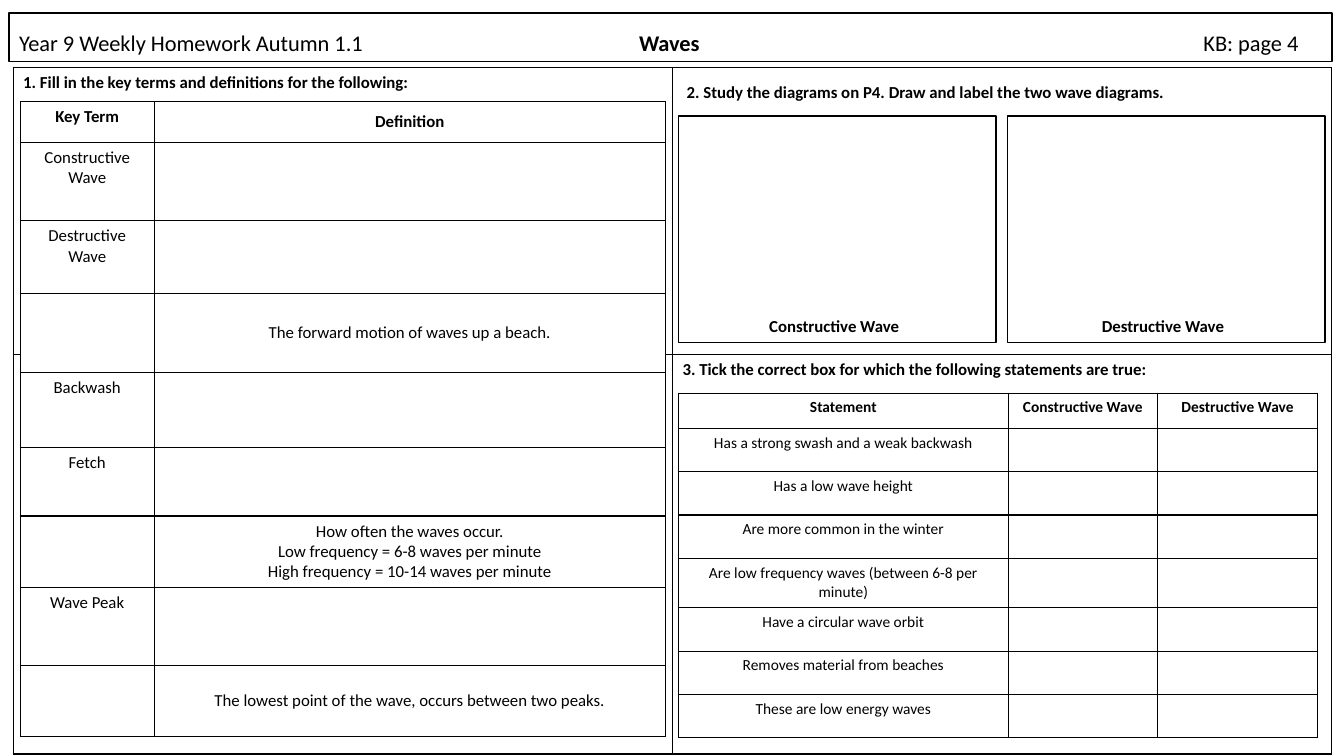
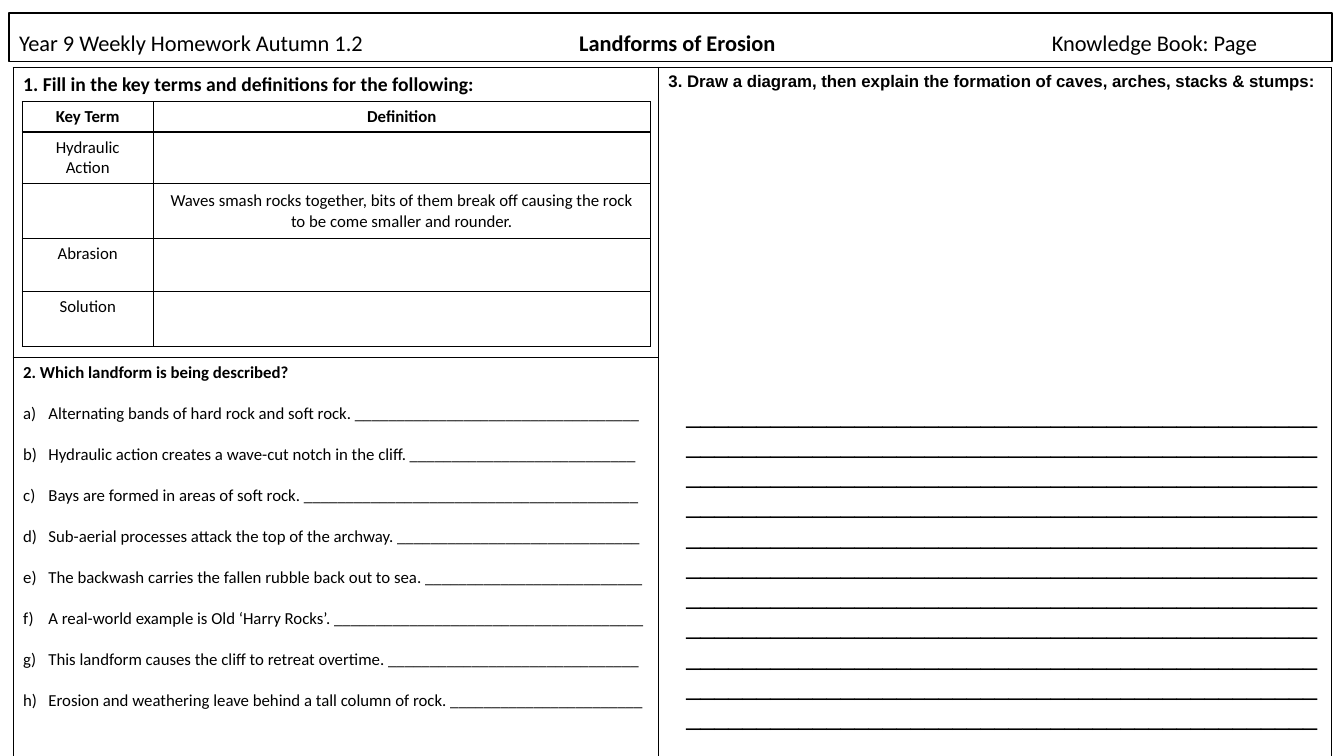
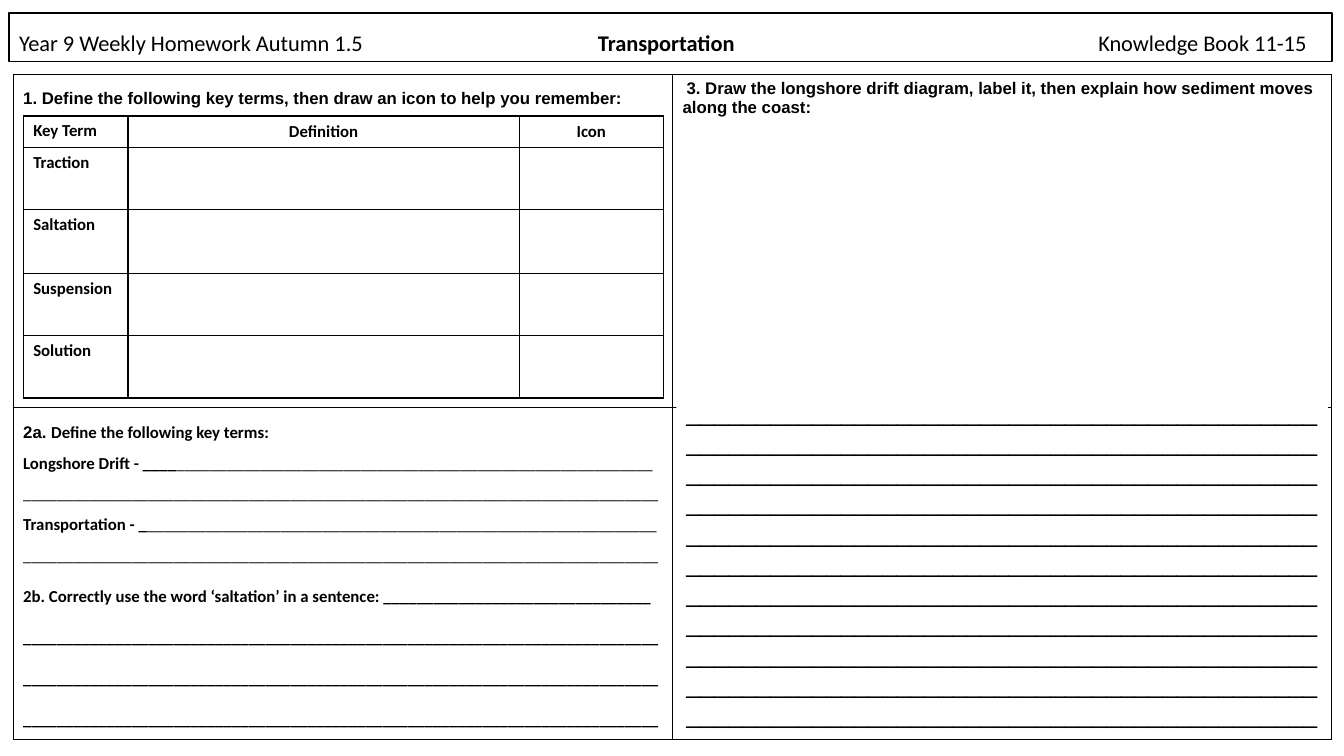
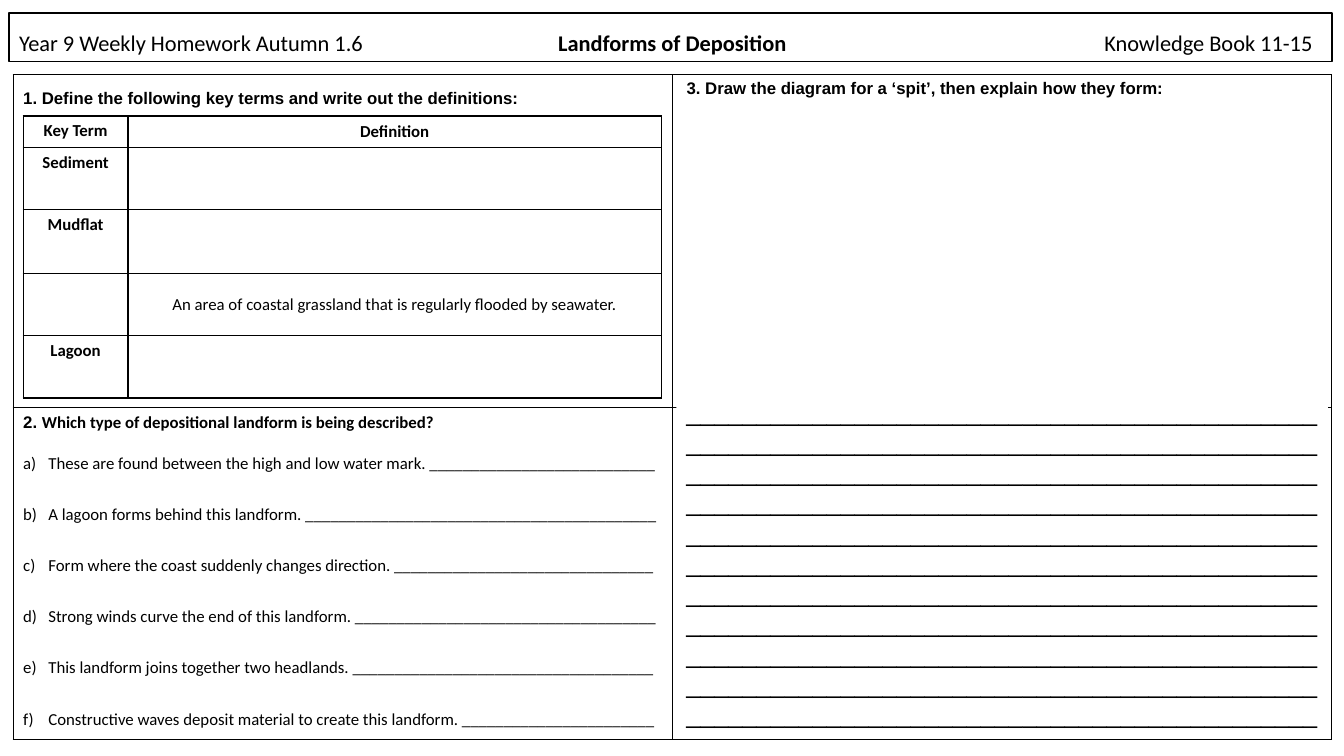
from collections import namedtuple
from dataclasses import dataclass

from lxml import etree
from pptx import Presentation
from pptx.dml.color import RGBColor
from pptx.enum.shapes import MSO_SHAPE as Shape
from pptx.enum.text import MSO_ANCHOR as Anchor, PP_ALIGN as Align
from pptx.oxml.ns import qn
from pptx.util import Inches, Pt

COLOURS = {"ink": "000000", "paper": "FFFFFF"}
BODY, HEADING = "Calibri", "Arial"
LINE_WIDTH = 1
PAGE_WIDTH, PAGE_HEIGHT = 13.33, 7.5

Box = namedtuple("Box", "left top width height")
HEADER = Box(0.09, 0.13, 13.12, 0.48)
FRAME_LEFT, FRAME_WIDTH = 0.13, 13.08
HALVES = (6.54, 6.54)


@dataclass
class Line:
    """One paragraph; text is a string or a list of (text, bold, font) spans."""
    text: object
    size: float = 12
    font: str = BODY
    bold: bool = True
    spacing: float = 1
    before: float = 0
    indent: float = 0
    align: object = Align.LEFT
    lettered: bool = False


def colour(name):
    return RGBColor.from_string(COLOURS[name])


def inches(box):
    return [Inches(length) for length in box]


def set_indent(para, margin, first):
    props = para._p.get_or_add_pPr()
    props.set("marL", str(Inches(margin)))
    props.set("indent", str(Inches(first)))
    return props


def write(frame, lines):
    for number, line in enumerate(lines):
        para = frame.paragraphs[0] if number == 0 else frame.add_paragraph()
        para.alignment = line.align
        para.line_spacing = line.spacing
        para.space_before = Pt(line.before)
        para.font.name, para.font.size = line.font, Pt(line.size)
        para.font.color.rgb = colour("ink")
        if isinstance(line.text, str):
            para.font.bold = line.bold
            para.add_run().text = line.text
        else:
            for text, bold, font in line.text:
                span = para.add_run()
                span.text = text
                span.font.bold, span.font.name = bold, font
        if line.lettered:
            props = set_indent(para, 0.25, -0.25)
            letter = etree.Element(qn("a:buAutoNum"), type="alphaLcParenR")
            props.insert_element_before(letter, "a:tabLst", "a:defRPr", "a:extLst")
        elif line.indent:
            set_indent(para, 0, line.indent)


def add_box(page, box, outlined=True):
    shape = page.shapes.add_shape(Shape.RECTANGLE, *inches(box))
    shape.shadow.inherit = False
    shape.fill.solid()
    shape.fill.fore_color.rgb = colour("paper")
    if outlined:
        shape.line.color.rgb = colour("ink")
        shape.line.width = Pt(LINE_WIDTH)
    else:
        shape.line.fill.background()
    shape.text_frame.word_wrap = True
    return shape


def style_cell(cell):
    cell.fill.solid()
    cell.fill.fore_color.rgb = colour("paper")
    props = cell._tc.get_or_add_tcPr()
    for order, side in enumerate(("lnL", "lnR", "lnT", "lnB")):
        border = etree.Element(qn(f"a:{side}"), w=str(Pt(LINE_WIDTH)))
        fill = etree.SubElement(border, qn("a:solidFill"))
        etree.SubElement(fill, qn("a:srgbClr"), val=COLOURS["ink"])
        props.insert(order, border)


def add_grid(page, left, top, columns, rows):
    box = Box(left, top, sum(columns), sum(rows))
    table = page.shapes.add_table(len(rows), len(columns), *inches(box)).table
    table.first_row = table.horz_banding = False
    for column, width in zip(table.columns, columns):
        column.width = Inches(width)
    for row, height in zip(table.rows, rows):
        row.height = Inches(height)
    for cell in table.iter_cells():
        style_cell(cell)
    return table


def add_header(page, week, title, reference, centre, right):
    """Week at the left, title around the centre stop, reference up to the right stop."""
    frame = add_box(page, HEADER).text_frame
    frame.vertical_anchor = Anchor.BOTTOM
    write(frame, [Line([(f"Year 9 Weekly Homework Autumn {week}\t", False, BODY),
                        (title, True, BODY),
                        (f"\t{reference}", False, BODY)], size=16, spacing=0.9)])
    props = frame.paragraphs[0]._p.get_or_add_pPr()
    stops = etree.Element(qn("a:tabLst"))
    for place, kind in ((centre, "ctr"), (right, "r")):
        etree.SubElement(stops, qn("a:tab"), pos=str(Inches(place)), algn=kind)
    props.insert_element_before(stops, "a:defRPr", "a:extLst")


def add_frame(page, top, columns, rows, cells, tall_right=False):
    """Four panels holding the tasks; the right two can be joined."""
    table = add_grid(page, FRAME_LEFT, top, columns, rows)
    if tall_right:
        table.cell(0, 1).merge(table.cell(1, 1))
    for place, lines in cells.items():
        write(table.cell(*place).text_frame, lines)


def add_word_table(page, left, top, columns, rows, texts, size=12, body_bold=False,
                   first_align=Align.CENTER, middle=True):
    """Bold heading row; every column but the first is centred both ways."""
    table = add_grid(page, left, top, columns, rows)
    for row, entries in enumerate(texts):
        for column, entry in enumerate(entries):
            if not entry:
                continue
            cell = table.cell(row, column)
            if column and middle:
                cell.vertical_anchor = Anchor.MIDDLE
            bold = row == 0 or (body_bold and column == 0)
            align = Align.CENTER if column else first_align
            write(cell.text_frame, [Line(text, size=size, bold=bold, align=align)
                                    for text in entry.split("\n")])


def add_writing_lines(page, top, count=11, per_line=45):
    width = 6.46
    left = FRAME_LEFT + FRAME_WIDTH - 0.04 - width
    frame = add_box(page, Box(left, top, width, 3.44), outlined=False).text_frame
    frame.vertical_anchor = Anchor.TOP
    write(frame, [Line("_" * count * per_line, size=18, font=HEADING,
                       bold=False, before=10)])


def add_drawing_box(page, box, caption):
    add_box(page, box)
    width = 1.83
    label = Box(box.left + (box.width - width) / 2 - 0.03, box.top + 1.93, width, 0.3)
    frame = page.shapes.add_textbox(*inches(label)).text_frame
    frame.word_wrap = True
    write(frame, [Line(caption, align=Align.CENTER)])


def questions(items, spacings):
    """Lettered questions, each followed by a blank of the given length."""
    return [Line(f"{text} {'_' * blank}", bold=False, spacing=spacing, lettered=True)
            for (text, blank), spacing in zip(items, spacings)]


def waves_page(page):
    add_header(page, "1.1", "Waves", "KB: page 4", 6.45, 12.69)
    top = 0.67
    add_frame(page, top, HALVES, (2.85, 3.96), {
        (0, 0): [Line("1. Fill in the key terms and definitions for the following:")],
        (0, 1): [Line("2. Study the diagrams on P4. Draw and label the two wave diagrams.",
                      spacing=1.5, indent=0.04)],
        (1, 1): [Line("3. Tick the correct box for which the following statements are true:")],
    })
    add_word_table(
        page, FRAME_LEFT + 0.07, top + 0.34, (1.33, 5.07),
        (0.4, 0.78, 0.72, 0.79, 0.74, 0.68, 0.71, 0.77, 0.71),
        [("Key Term", "Definition"),
         ("Constructive Wave", ""),
         ("Destructive Wave", ""),
         ("", "The forward motion of waves up a beach."),
         ("Backwash", ""),
         ("Fetch", ""),
         ("", "How often the waves occur.\nLow frequency = 6-8 waves per minute\n"
              "High frequency = 10-14 waves per minute"),
         ("Wave Peak", ""),
         ("", "The lowest point of the wave, occurs between two peaks.")])
    kinds = ("Constructive Wave", "Destructive Wave")
    right = FRAME_LEFT + HALVES[0] + 0.06
    statements = ("Has a strong swash and a weak backwash",
                  "Has a low wave height",
                  "Are more common in the winter",
                  "Are low frequency waves (between 6-8 per minute)",
                  "Have a circular wave orbit",
                  "Removes material from beaches",
                  "These are low energy waves")
    add_word_table(page, right, top + 3.23, (3.27, 1.48, 1.59),
                   (0.35, 0.43, 0.43, 0.43, 0.49, 0.43, 0.43, 0.43),
                   [("Statement", *kinds), *((text,) for text in statements)],
                   size=11, middle=False)
    for number, kind in enumerate(kinds):
        add_drawing_box(page, Box(right + number * 3.26, top + 0.48, 3.15, 2.25), kind)


def erosion_page(page):
    add_header(page, "1.2", "Landforms of Erosion", "Knowledge Book: Page", 6.53, 12.28)
    top = 0.67
    items = [("Alternating bands of hard rock and soft rock.", 34),
             ("Hydraulic action creates a wave-cut notch in the cliff.", 27),
             ("Bays are formed in areas of soft rock.", 40),
             ("Sub-aerial processes attack the top of the archway.", 29),
             ("The backwash carries the fallen rubble back out to sea.", 26),
             ("A real-world example is Old ‘Harry Rocks’.", 37),
             ("This landform causes the cliff to retreat overtime.", 30),
             ("Erosion and weathering leave behind a tall column of rock.", 23)]
    add_frame(page, top, (6.4, 6.68), (2.88, 3.96), {
        (0, 0): [Line("1. Fill in the key terms and definitions for the following:", size=14)],
        (0, 1): [Line("3. Draw a diagram, then explain the formation of caves, arches, "
                      "stacks & stumps:", font=HEADING)],
        (1, 0): [Line("2. Which landform is being described?"),
                 *questions(items, [2] * len(items))],
    }, tall_right=True)
    add_writing_lines(page, 3.9)
    add_word_table(
        page, FRAME_LEFT + 0.09, top + 0.34, (1.3, 4.93), (0.3, 0.51, 0.55, 0.52, 0.55),
        [("Key Term", "Definition"),
         ("Hydraulic Action", ""),
         ("", "Waves smash rocks together, bits of them break off causing the rock "
              "to be come smaller and rounder."),
         ("Abrasion", ""),
         ("Solution", "")])


def coast_page(page, first_task, second_task, third_task, columns, texts, first_align):
    """Word table over the second task, with a drawing and writing task at the right."""
    top = 0.74
    add_frame(page, top, HALVES, (3.3, 3.3), {
        (0, 0): [Line(first_task, font=HEADING, spacing=1.5)],
        (0, 1): [Line(third_task, font=HEADING, indent=0.04)],
        (1, 0): second_task,
    })
    add_word_table(page, FRAME_LEFT + 0.1, top + 0.41, columns,
                   (0.31, 0.62, 0.63, 0.62, 0.62), texts,
                   body_bold=True, first_align=first_align)
    add_writing_lines(page, 3.88)


def transportation_page(page):
    add_header(page, "1.5", "Transportation", "Knowledge Book 11-15", 6.42, 12.77)
    full = "_" * 76
    second_task = [Line([("2a. ", True, HEADING),
                         ("Define the following key terms:", True, BODY)], spacing=1.5)]
    for term, dark, light in (("Longshore Drift", 4, 57), ("Transportation", 1, 61)):
        second_task += [Line([(f"{term} - {'_' * dark}", True, BODY),
                              ("_" * light, False, BODY)], spacing=1.5),
                        Line(full, bold=False, spacing=1.5)]
    second_task += [Line(f"2b. Correctly use the word ‘saltation’ in a sentence: {'_' * 32}",
                         before=14.65),
                    Line(full * 2, spacing=2),
                    Line(full, spacing=2)]
    terms = ("Traction", "Saltation", "Suspension", "Solution")
    coast_page(page,
               "1. Define the following key terms, then draw an icon to help you remember:",
               second_task,
               "3. Draw the longshore drift diagram, label it, then explain how sediment "
               "moves along the coast:",
               (1.04, 3.88, 1.43),
               [("Key Term", "Definition", "Icon"), *((term,) for term in terms)],
               Align.LEFT)


def deposition_page(page):
    add_header(page, "1.6", "Landforms of Deposition", "Knowledge Book 11-15", 6.48, 12.83)
    items = [("These are found between the high and low water mark.", 27),
             ("A lagoon forms behind this landform.", 42),
             ("Form where the coast suddenly changes direction.", 31),
             ("Strong winds curve the end of this landform.", 36),
             ("This landform joins together two headlands.", 36),
             ("Constructive waves deposit material to create this landform.", 23)]
    heading = Line([("2. ", True, HEADING),
                    ("Which type of depositional landform is being described?", True, BODY)])
    coast_page(page,
               "1. Define the following key terms and write out the definitions:",
               [heading, *questions(items, [2] + [2.5] * 5)],
               "3. Draw the diagram for a ‘spit’, then explain how they form:",
               (1.04, 5.29),
               [("Key Term", "Definition"),
                ("Sediment", ""),
                ("Mudflat", ""),
                ("", "An area of coastal grassland that is regularly flooded by seawater."),
                ("Lagoon", "")],
               Align.CENTER)


def main():
    deck = Presentation()
    deck.slide_width, deck.slide_height = Inches(PAGE_WIDTH), Inches(PAGE_HEIGHT)
    blank = deck.slide_layouts[6]
    for build in (waves_page, erosion_page, transportation_page, deposition_page):
        build(deck.slides.add_slide(blank))
    deck.save("out.pptx")


if __name__ == "__main__":
    main()
